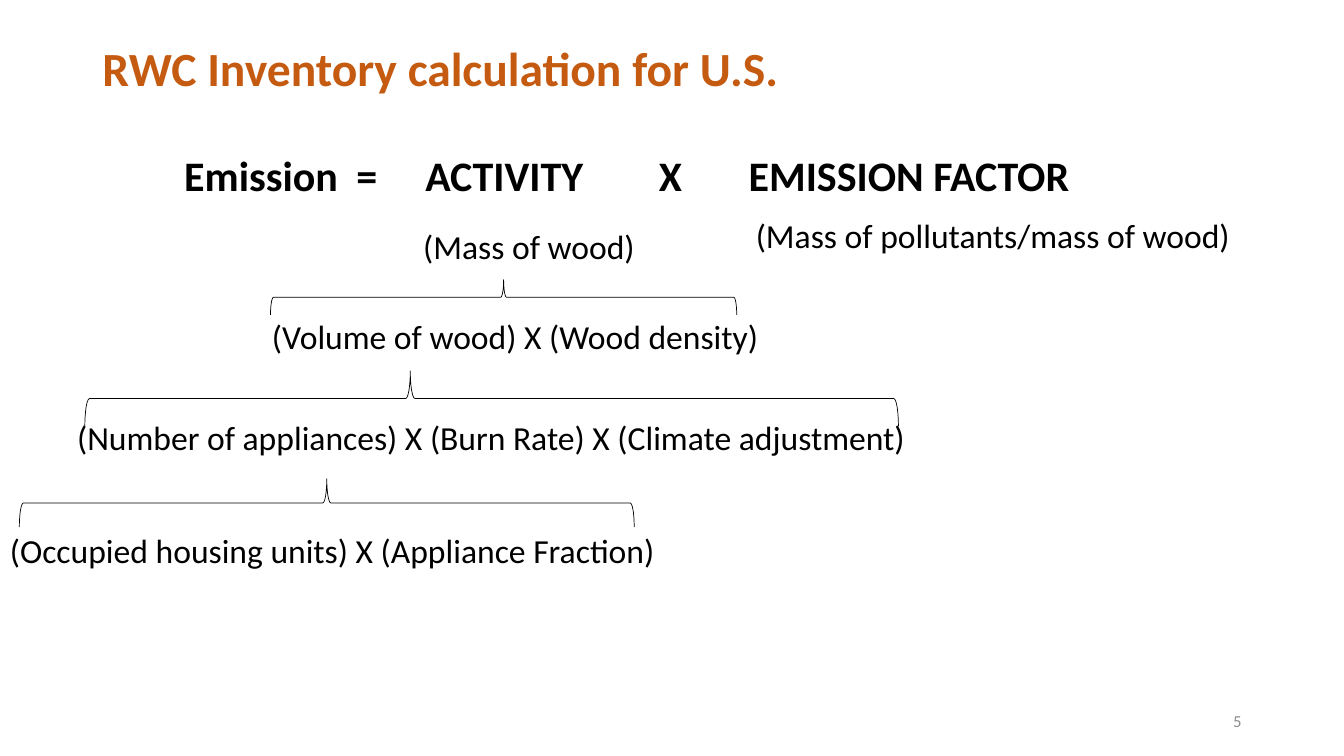
from pptx import Presentation
from pptx.dml.color import RGBColor
from pptx.enum.shapes import MSO_SHAPE
from pptx.enum.text import MSO_ANCHOR, MSO_AUTO_SIZE, PP_ALIGN
from pptx.oxml.ns import qn
from pptx.util import Inches, Pt
from lxml import etree

BRACE = MSO_SHAPE.LEFT_BRACE
TOP, MIDDLE = MSO_ANCHOR.TOP, MSO_ANCHOR.MIDDLE
NO_FIT = MSO_AUTO_SIZE.NONE
LEFT, RIGHT = PP_ALIGN.LEFT, PP_ALIGN.RIGHT


def color(value):
    return RGBColor.from_string(value)


class Deck:
    font, ink, accent, muted = "Calibri", "000000", "C55A11", "8C8C8C"
    cols, rows = 32, 18

    def __init__(self, prs):
        self.prs = prs
        self.s = prs.slides.add_slide(prs.slide_layouts[5])

    def x(self, columns):
        return round(self.prs.slide_width * columns / self.cols)

    def y(self, rows):
        return round(self.prs.slide_height * rows / self.rows)

    def box(self, left, top, width, height):
        return self.x(left), self.y(top), self.x(width), self.y(height)

    def fill_text(self, sp, text, size, ink, bold=False, align=LEFT, anchor=TOP):
        tf = sp.text_frame
        tf.word_wrap, tf.auto_size, tf.vertical_anchor = True, NO_FIT, anchor
        p = tf.paragraphs[0]
        p.alignment = align
        r = p.add_run()
        r.text = text
        r.font.name, r.font.size, r.font.bold = self.font, Pt(size), bold
        r.font.color.rgb = color(ink)
        return p

    def title(self, text, *grid):
        sp = self.s.shapes.title
        sp.left, sp.top, sp.width, sp.height = self.box(*grid)
        p = self.fill_text(sp, text, 34, self.accent, bold=True)
        p.line_spacing = 0.9

    def text(self, text, *grid, size=24, ink=ink, **style):
        sp = self.s.shapes.add_textbox(*self.box(*grid))
        return self.fill_text(sp, text, size, ink, **style)

    def equation(self, terms, stops, *grid):
        p = self.text("\t".join(terms), *grid, size=30, bold=True)
        tabs = etree.SubElement(p._p.get_or_add_pPr(), qn("a:tabLst"))
        for stop in stops:
            etree.SubElement(tabs, qn("a:tab"), pos=str(self.x(stop)), algn="l")

    def brace(self, *grid, tip=0.5):
        left, top, width, height = self.box(*grid)
        sp = self.s.shapes.add_shape(
            BRACE, left + (width - height) // 2, top + (height - width) // 2, height, width)
        sp.rotation = 90
        sp.adjustments[0] = 0.083
        sp.adjustments[1] = 1 - tip
        sp.shadow.inherit = False
        sp.fill.background()
        sp.line.color.rgb = color(self.ink)
        sp.line.width = Pt(0.5)


def main():
    prs = Presentation()
    prs.slide_width, prs.slide_height = Inches(13.33), Inches(7.5)
    deck = Deck(prs)
    deck.title("RWC Inventory calculation for U.S.", 2.2, 0.96, 27.6, 2)
    deck.equation(["Emission", "=", "ACTIVITY", "X", "EMISSION FACTOR"],
                  [4.1, 5.74, 11.3, 13.44], 4.15, 3.43, 23.7, 1.46)
    deck.text("(Mass of wood)", 9.84, 5.26, 6.36, 1.2)
    deck.text("(Mass of pollutants/mass of wood)", 17.76, 5, 12.24, 1.2)
    deck.text("(Volume of wood) X (Wood density)", 6.24, 7.4, 12.74, 1.2)
    deck.brace(6.44, 6.66, 11.1, 0.84)
    deck.text("(Number of appliances) X (Burn Rate) X (Climate adjustment)",
              1.6, 9.82, 21.1, 1.2)
    deck.brace(2.02, 8.83, 19.37, 1.32, tip=0.4)
    deck.text("(Occupied housing units) X (Appliance Fraction)", 0, 12.5, 16.8, 1.2)
    deck.brace(0.46, 11.4, 14.64, 1.15)
    deck.text("5", 22.6, 16.68, 7.2, 0.96, size=12, ink=deck.muted,
              align=RIGHT, anchor=MIDDLE)
    prs.save("out.pptx")


if __name__ == "__main__":
    main()
